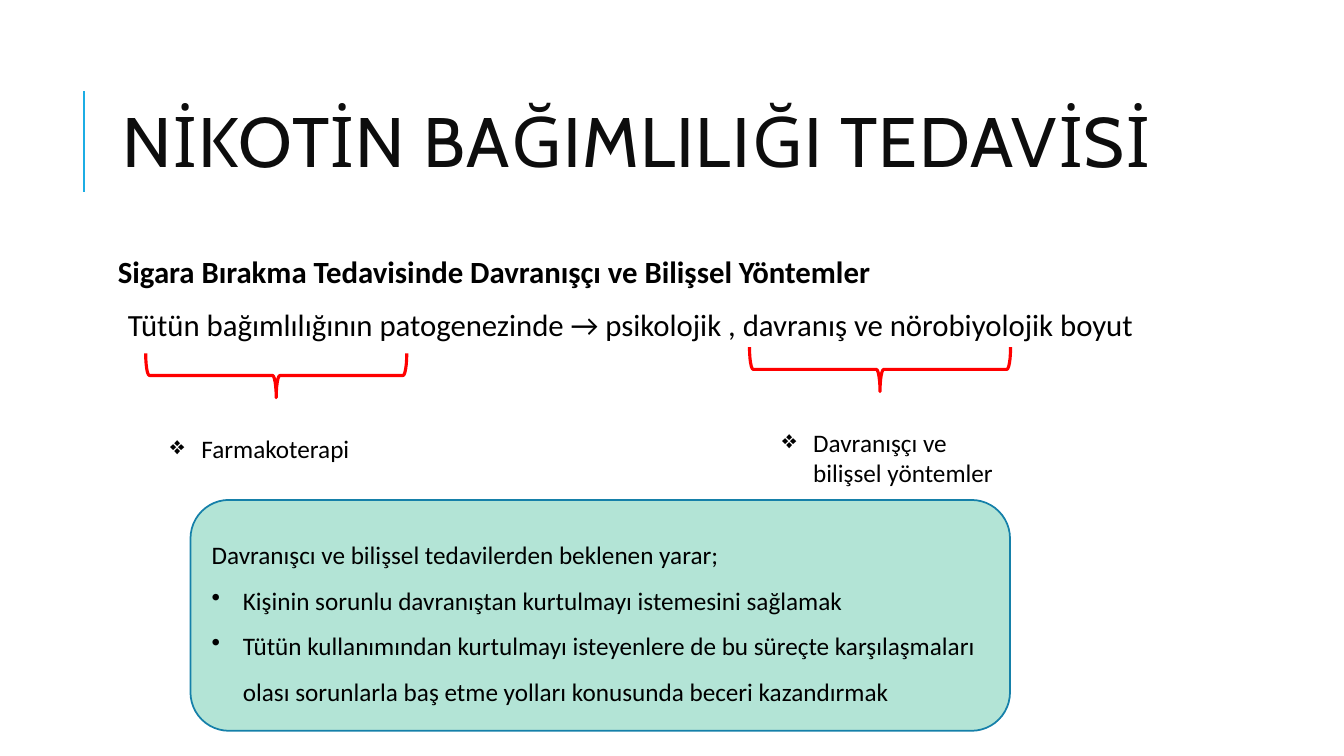
from dataclasses import dataclass, field

from lxml.etree import SubElement
from pptx import Presentation
from pptx.dml.color import RGBColor
from pptx.enum.shapes import MSO_CONNECTOR, MSO_SHAPE
from pptx.enum.text import MSO_ANCHOR, MSO_AUTO_SIZE, PP_ALIGN
from pptx.oxml.ns import qn
from pptx.shapes.base import BaseShape
from pptx.util import Emu, Inches, Pt


@dataclass(frozen=True)
class Theme:
    head_font: str = "Cabin"
    text_font: str = "Calibri"
    head: str = "0D0D0D"
    ink: str = "000000"
    rule: str = "1CADE4"
    brace: str = "FF0000"
    fill: str = "B3E4D6"
    edge: str = "1580A9"
    head_size: int = 50
    lead_size: int = 22
    text_size: int = 18


@dataclass(frozen=True)
class Area:
    """Left, top, width and height in grid cells."""
    col: float
    row: float
    cols: float
    rows: float


@dataclass(frozen=True)
class Para:
    text: str
    mark: str = ""
    bold: bool = False
    left: float = 0
    form: dict = field(default_factory=dict)


@dataclass(frozen=True)
class Branch:
    brace: Area
    label: Area
    text: str


THEME = Theme()
WIDE, HIGH = Inches(13.333), Inches(7.5)
CELL = HIGH / 90  # the slide is a grid of 160 columns by 90 rows
HANG = 0.31

TITLE = Area(13.44, 7.68, 127.56, 19.68)
LEAD = Area(13.44, 30, 127.56, 52.8)
PANEL = Area(22.68, 59.52, 97.56, 27.48)

TIGHT = {"line_spacing": 0.9, "space_after": Pt(2)}
LOOSE = {"line_spacing": 1.5}
LEADS = [
    Para("Sigara Bırakma Tedavisinde Davranışçı ve Bilişsel Yöntemler",
         bold=True, form=TIGHT),
    Para("Tütün bağımlılığının patogenezinde → psikolojik , davranış ve "
         "nörobiyolojik boyut", left=0.1,
         form=TIGHT | {"space_before": Pt(12)}),
]
GAINS = [
    Para("Davranışcı ve bilişsel tedavilerden beklenen yarar;", form=LOOSE),
    Para("Kişinin sorunlu davranıştan kurtulmayı istemesini sağlamak",
         "•", form=LOOSE),
    Para("Tütün kullanımından kurtulmayı isteyenlere de bu süreçte "
         "karşılaşmaları olası sorunlarla baş etme yolları konusunda "
         "beceri kazandırmak", "•", form=LOOSE),
]
BRANCHES = [
    Branch(Area(102.12, 28.44, 5.28, 31.08), Area(91.92, 50.28, 28.44, 8.52),
           "Davranışçı ve bilişsel yöntemler"),
    Branch(Area(30.24, 29.16, 5.28, 31.08), Area(19.08, 51, 34.92, 4.8),
           "Farmakoterapi"),
]


def span(cells: float) -> Emu:
    return Emu(round(cells * CELL))


def place(area: Area) -> tuple[Emu, ...]:
    return tuple(map(span, (area.col, area.row, area.cols, area.rows)))


def apply(item: object, form: dict) -> None:
    for name, value in form.items():
        setattr(item, name, value)


def style(font, face: str, size: int, ink: str, bold: bool = False) -> None:
    apply(font, {"name": face, "size": Pt(size), "bold": bold})
    font.color.rgb = RGBColor.from_string(ink)


def write(shape: BaseShape, paras: list[Para], size: int, form: dict) -> None:
    frame = shape.text_frame
    apply(frame, {"word_wrap": True} | form)
    for order, para in enumerate(paras):
        line = frame.paragraphs[0] if order == 0 else frame.add_paragraph()
        props = line._p.get_or_add_pPr()
        left = HANG if para.mark else para.left
        props.set("marL", str(Inches(left)))
        props.set("indent", str(-Inches(left) if para.mark else 0))
        if para.mark:
            SubElement(props, qn("a:buChar")).set("char", para.mark)
        apply(line, {"alignment": PP_ALIGN.LEFT} | para.form)
        run = line.add_run()
        run.text = para.text
        style(run.font, THEME.text_font, size, THEME.ink, para.bold)


def draw(shapes, kind: MSO_SHAPE, area: Area, edge: str, width: float,
         fill: str = "") -> BaseShape:
    shape = shapes.add_shape(kind, *place(area))
    shape.shadow.inherit = False
    if fill:
        shape.fill.solid()
        shape.fill.fore_color.rgb = RGBColor.from_string(fill)
    else:
        shape.fill.background()
    shape.line.color.rgb = RGBColor.from_string(edge)
    shape.line.width = Pt(width)
    return shape


def main() -> None:
    deck = Presentation()
    apply(deck, {"slide_width": WIDE, "slide_height": HIGH})
    slide = deck.slides.add_slide(deck.slide_layouts[5])
    shapes = slide.shapes

    # Title with its upright rule
    rule = shapes.add_connector(MSO_CONNECTOR.STRAIGHT, span(10), span(22.8),
                                span(10), span(10.8))
    rule.line.color.rgb = RGBColor.from_string(THEME.rule)
    rule.line.width = Pt(1.5)
    SubElement(rule._element.spPr, qn("a:effectLst"))
    title = shapes.title
    apply(title, dict(zip(("left", "top", "width", "height"), place(TITLE))))
    apply(title.text_frame, {"text": "NİKOTİN BAĞIMLILIĞI TEDAVİSİ",
                             "vertical_anchor": MSO_ANCHOR.MIDDLE,
                             "word_wrap": True,
                             "auto_size": MSO_AUTO_SIZE.NONE})
    line = title.text_frame.paragraphs[0]
    apply(line, {"alignment": PP_ALIGN.LEFT, "line_spacing": 0.8})
    run = line.runs[0]
    style(run.font, THEME.head_font, THEME.head_size, THEME.head)
    run._r.get_or_add_rPr().set("spc", "100")

    # Lead lines
    inset = dict.fromkeys(("margin_left", "margin_top", "margin_right",
                           "margin_bottom"), Inches(0.05))
    write(shapes.add_textbox(*place(LEAD)), LEADS, THEME.lead_size, inset)

    # Braces and the treatment under each
    for branch in BRANCHES:
        brace = draw(shapes, MSO_SHAPE.RIGHT_BRACE, branch.brace,
                     THEME.brace, 2.25)
        brace.rotation = 90
        write(shapes.add_textbox(*place(branch.label)),
              [Para(branch.text, "❖")], THEME.text_size,
              {"auto_size": MSO_AUTO_SIZE.SHAPE_TO_FIT_TEXT})

    # Panel of expected gains
    panel = draw(shapes, MSO_SHAPE.ROUNDED_RECTANGLE, PANEL, THEME.edge, 1.25,
                 THEME.fill)
    write(panel, GAINS, THEME.text_size,
          {"vertical_anchor": MSO_ANCHOR.MIDDLE})

    deck.save("out.pptx")


if __name__ == "__main__":
    main()
